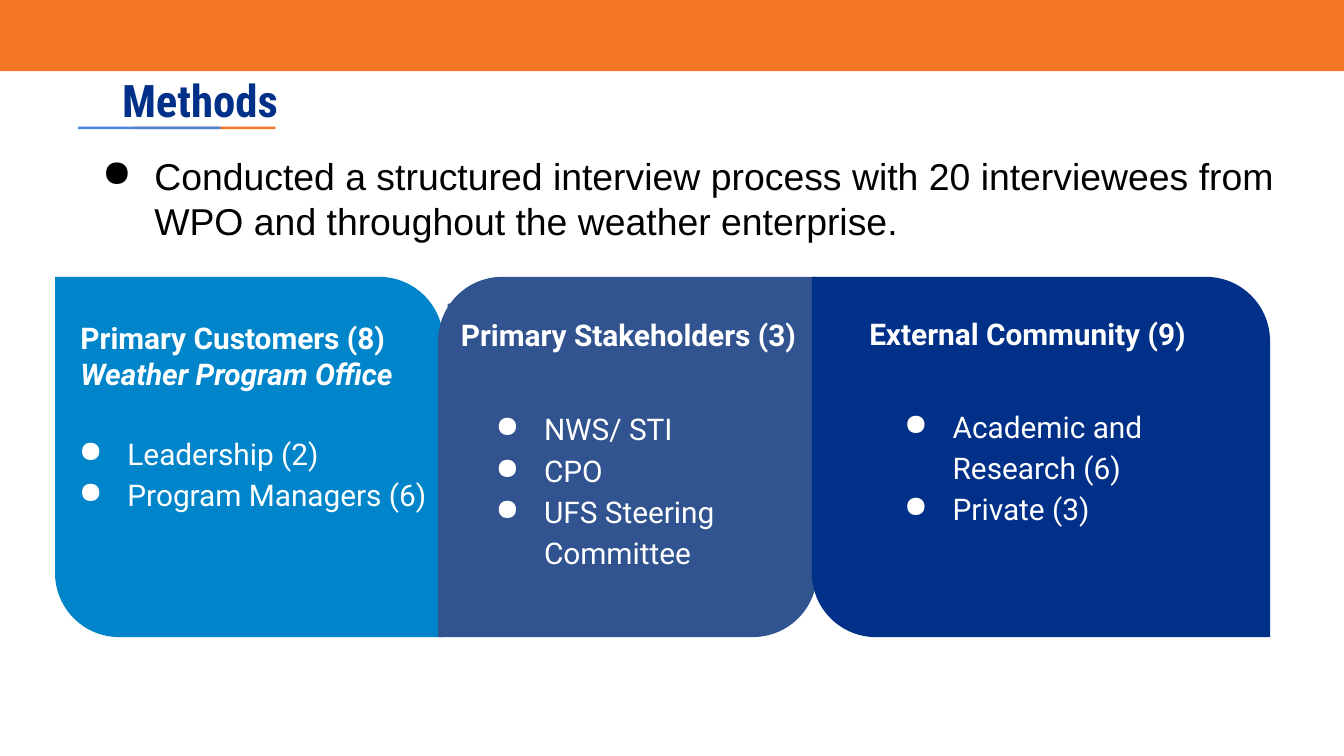
from lxml import etree
from pptx import Presentation
from pptx.dml.color import RGBColor
from pptx.enum import shapes, text
from pptx.oxml import ns
from pptx.util import Pt

ORANGE = RGBColor(0xF4, 0x77, 0x23)
LIGHT_BLUE = RGBColor(0x4B, 0x85, 0xDC)
NAVY = RGBColor(0x00, 0x30, 0x87)
SKY = RGBColor(0x00, 0x85, 0xCA)
SLATE = RGBColor(0x31, 0x53, 0x8F)
WHITE = RGBColor(0xFF, 0xFF, 0xFF)
BLACK = RGBColor(0x00, 0x00, 0x00)

RECT = shapes.MSO_SHAPE.RECTANGLE
DIAGONAL = shapes.MSO_SHAPE.ROUND_2_DIAG_RECTANGLE
CARD_TOP, CARD_HEIGHT, CORNER = 148.3, 193, 0.178
INSET, INDENT = 7.2, 36


class Deck:
    """The current slide and the style shared by its elements."""

    def __init__(self, slide):
        self.slide = slide

    def block(self, box, fill, kind=RECT, corners=()):
        shape = self.slide.shapes.add_shape(kind, *map(Pt, box))
        shape.shadow.inherit = False
        shape.fill.solid()
        shape.fill.fore_color.rgb = fill
        shape.line.fill.background()
        for i, corner in enumerate(corners):
            shape.adjustments[i] = corner
        return shape

    def label(self, box, lines, size, font, color, bold=False, italic_from=None,
              hanging=None, spacing=None, fill=None):
        """Add lines, bulleted if hanging is given, on a panel if fill is given."""
        if fill is None:
            holder = self.slide.shapes.add_textbox(*map(Pt, box))
        else:
            holder = self.block(box, fill)
        frame = holder.text_frame
        frame.word_wrap = True
        frame.vertical_anchor = text.MSO_ANCHOR.TOP
        frame.margin_left = frame.margin_right = Pt(INSET)
        frame.margin_top = frame.margin_bottom = Pt(INSET)
        for i, line in enumerate(lines):
            paragraph = frame.paragraphs[0] if i == 0 else frame.add_paragraph()
            paragraph.text = line
            paragraph.alignment = text.PP_ALIGN.LEFT
            if spacing:
                paragraph.line_spacing = spacing
            if hanging:
                self.bullet(paragraph, hanging, color)
            style = paragraph.font
            style.size, style.name, style.bold = Pt(size), font, bold
            style.color.rgb = color
            if italic_from is not None and i >= italic_from:
                style.italic = True

    def bullet(self, paragraph, hanging, color):
        props = paragraph._p.get_or_add_pPr()
        props.set("marL", str(Pt(INDENT)))
        props.set("indent", str(-Pt(hanging)))
        bullet_color = etree.SubElement(props, ns.qn("a:buClr"))
        etree.SubElement(bullet_color, ns.qn("a:srgbClr"), val=str(color))
        etree.SubElement(props, ns.qn("a:buChar"), char="●")

    def card(self, left, width, fill, corners, heading_box, heading, list_box,
             items, panel=None):
        self.block((left, CARD_TOP, width, CARD_HEIGHT), fill, DIAGONAL, corners)
        self.label(heading_box, heading, 16, "Roboto", WHITE, bold=True,
                   italic_from=1, fill=panel)
        self.label(list_box, items, 16, "Roboto", WHITE, hanging=26, spacing=1.15)


def main():
    prs = Presentation()
    prs.slide_width, prs.slide_height = Pt(720), Pt(405)
    deck = Deck(prs.slides.add_slide(prs.slide_layouts[6]))

    # Top band, title and its two-colour underline
    deck.block((0, 0, 720, 38.2), ORANGE)
    for left, color in ((71.2, ORANGE), (41.8, LIGHT_BLUE)):
        deck.block((left, 67.8, 76.4, 1.4), color)
    deck.label((58.3, 31.7, 318, 44), ["Methods"], 24, "Roboto Condensed", NAVY,
               bold=True)

    # Interviewee groups
    deck.card(29.5, 208, SKY, (0, CORNER),
              (36, 164.2, 198, 57),
              ["Primary Customers (8)", "Weather Program Office"],
              (25.2, 223.2, 214, 100),
              ["Leadership (2)", "Program Managers (6)"])
    deck.card(234.7, 203, SLATE, (CORNER, 0),
              (239.8, 162.7, 203, 57), ["Primary Stakeholders (3)"],
              (248.4, 210.2, 186, 86),
              ["NWS/ STI", "CPO", "UFS Steering Committee"], panel=SLATE)
    deck.card(434.9, 245.5, NAVY, (0, CORNER),
              (458.6, 162, 198, 57), ["External Community (9)"],
              (467.3, 208.8, 198, 83),
              ["Academic and Research (6)", "Private (3)"], panel=NAVY)

    # Summary of the method
    deck.label((39.6, 74.9, 667.4, 59),
               ["Conducted a structured interview process with 20 interviewees "
                "from WPO and throughout the weather enterprise."],
               20, "Arial", BLACK, hanging=28)

    prs.save("out.pptx")


if __name__ == "__main__":
    main()
